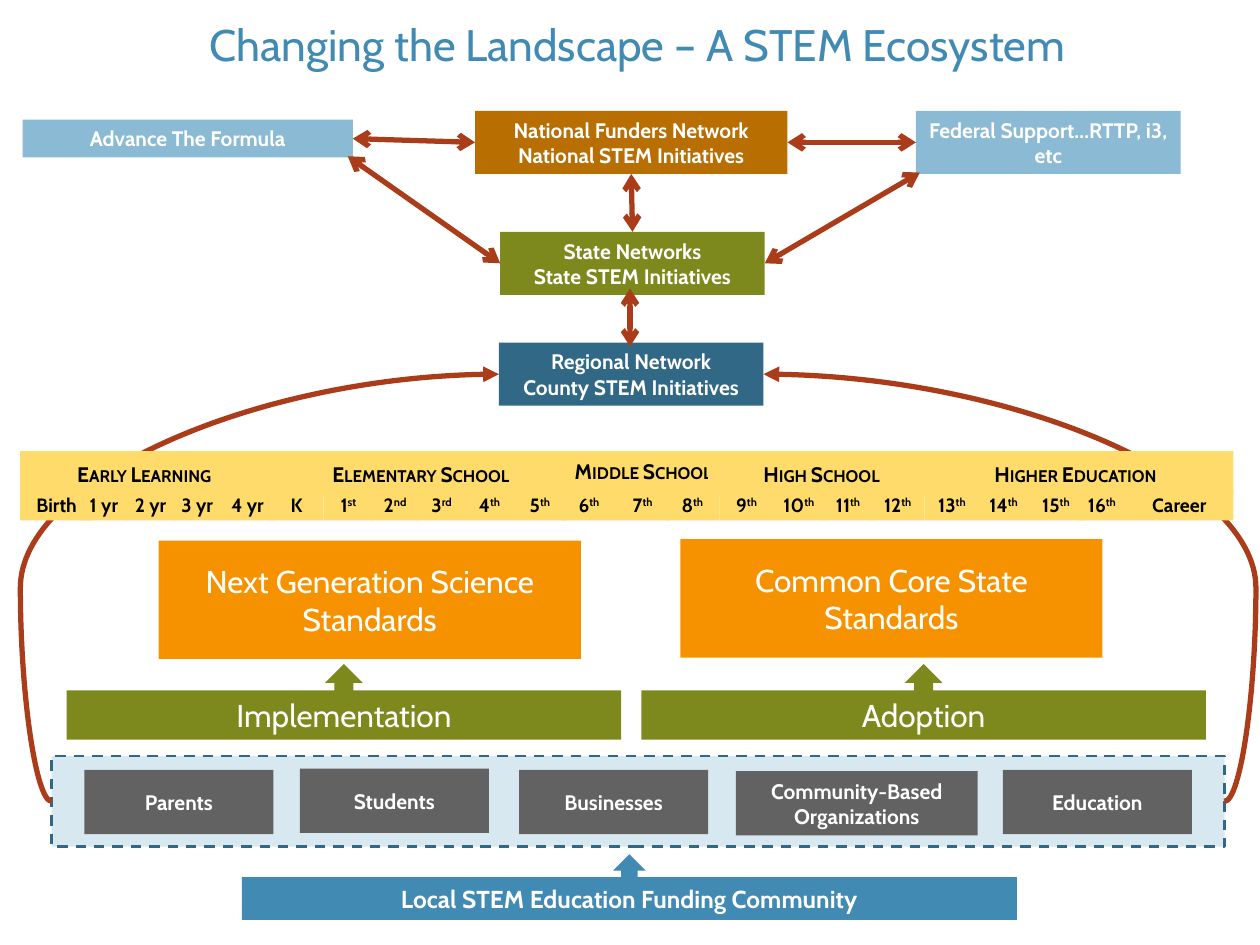
from lxml.etree import SubElement
from pptx import Presentation
from pptx.dml.color import RGBColor
from pptx.enum.dml import MSO_LINE
from pptx.enum.shapes import MSO_CONNECTOR, MSO_SHAPE
from pptx.enum.text import MSO_ANCHOR, PP_ALIGN
from pptx.oxml.ns import qn
from pptx.util import Inches, Pt

COLORS = {
    "title": "418AB3", "white": "FFFFFF", "black": "000000",
    "national": "B86E00", "green": "7D891D", "regional": "316886",
    "partner": "8ABAD4", "arrow": "AB3C19", "band": "FEDB6A",
    "standard": "F69200", "panel": "D8E8F1", "stakeholder": "626262",
    "funding": "418AB3",
}
TOP, LEFT, BOTTOM, RIGHT = range(4)
BOX_TEXT = {"size": Pt(12), "bold": True}
LARGE_TEXT = {"size": Pt(18), "bold": False}
GRADE_MARGINS = {"margin_left": 0, "margin_right": 0,
                 "margin_top": Inches(0.03), "margin_bottom": Inches(0.03)}


def color(name):
    return RGBColor.from_string(COLORS[name])


def set_attributes(target, values):
    for name, value in values.items():
        setattr(target, name, value)


def add_run(paragraph, text, font_values, font_color, **run_properties):
    run = paragraph.add_run()
    run.text = text
    set_attributes(run.font, {"name": "Cabin", **font_values})
    run.font.color.rgb = color(font_color)
    for name, value in run_properties.items():
        run.font._element.set(name, value) if hasattr(run.font, "_element") \
            else run._r.get_or_add_rPr().set(name, value)
    return run


def add_box(shapes, box, fill, lines=(), preset=MSO_SHAPE.RECTANGLE, font=BOX_TEXT,
            font_color="white", anchor=MSO_ANCHOR.MIDDLE, frame=None, **run_properties):
    shape = shapes.add_shape(preset, *map(Inches, box))
    shape.shadow.inherit = False
    shape.fill.solid()
    shape.fill.fore_color.rgb = color(fill)
    shape.line.fill.background()
    text_frame = shape.text_frame
    set_attributes(text_frame, {"word_wrap": True, "vertical_anchor": anchor, **(frame or {})})
    for index, line in enumerate(lines):
        paragraph = text_frame.add_paragraph() if index else text_frame.paragraphs[0]
        paragraph.alignment = PP_ALIGN.CENTER
        add_run(paragraph, line, font, font_color, **run_properties)
    return shape


def add_arrow(slide, start, end, kind=MSO_CONNECTOR.STRAIGHT, head="arrow", tail="arrow"):
    connector = slide.shapes.add_connector(kind, *map(Inches, (*start, *end)))
    connector.line.width = Pt(3)
    connector.line.color.rgb = color("arrow")
    line = connector.line._get_or_add_ln()
    for tag, arrowhead in (("a:headEnd", head), ("a:tailEnd", tail)):
        if arrowhead:
            SubElement(line, qn(tag), type=arrowhead)
    SubElement(connector._element.spPr, qn("a:effectLst"))
    return connector


def add_title(slide, box):
    title = slide.shapes.title
    set_attributes(title, dict(zip(("left", "top", "width", "height"), map(Inches, box))))
    set_attributes(title.text_frame, {"word_wrap": True, "vertical_anchor": MSO_ANCHOR.TOP})
    paragraph = title.text_frame.paragraphs[0]
    paragraph.alignment = PP_ALIGN.CENTER
    add_run(paragraph, "Changing the Landscape – A STEM Ecosystem", {"size": Pt(25.2)}, "title")


def add_networks(slide, box):
    left, top = box[:2]
    boxes = {}
    for name, x, y, width, height, fill, lines in (
        ("national", 3.59, 0, 2.48, 0.5, "national",
         ("National Funders Network", "National STEM Initiatives")),
        ("state", 3.79, 0.96, 2.1, 0.5, "green", ("State Networks", "State STEM Initiatives")),
        ("regional", 3.78, 1.84, 2.1, 0.5, "regional",
         ("Regional Network", "County STEM Initiatives")),
        ("partner", 0, 0.07, 2.62, 0.3, "partner", ("Advance The Formula",)),
        ("federal", 7.09, 0, 2.1, 0.5, "partner", ("Federal Support…RTTP, i3, etc",)),
    ):
        boxes[name] = add_box(slide.shapes, (left + x, top + y, width, height), fill, lines)

    for begin, begin_side, end, end_side in (
        ("state", TOP, "national", BOTTOM),
        ("partner", RIGHT, "national", LEFT),
        ("federal", LEFT, "national", RIGHT),
    ):
        arrow = add_arrow(slide, (left, top), (left, top))
        arrow.begin_connect(boxes[begin], begin_side)
        arrow.end_connect(boxes[end], end_side)

    for side, x, y in ((RIGHT, 7.12, 0.49), (LEFT, 2.58, 0.36)):
        arrow = add_arrow(slide, (left, top), (left + x, top + y))
        arrow.begin_connect(boxes["state"], side)
    add_arrow(slide, (left + 4.82, top + 1.87), (left + 4.82, top + 1.41))


def add_feedback_curves(slide, box):
    left, top, width, height = box
    for start, end, bend in ((left, 3.96, -7000), (left + width, 6.06, -6800)):
        curve = add_arrow(slide, (start, top + height), (end, top),
                          MSO_CONNECTOR.CURVE, head=None, tail="triangle")
        geometry = curve._element.spPr.find(qn("a:prstGeom"))
        adjustments = geometry.find(qn("a:avLst"))
        if adjustments is None:
            adjustments = SubElement(geometry, qn("a:avLst"))
        SubElement(adjustments, qn("a:gd"), name="adj1", fmla=f"val {bend}")


def add_stakeholders(slide, box):
    left, top = box[:2]
    shapes = slide.shapes.add_group_shape().shapes
    panel = add_box(shapes, box, "panel")
    panel.line.color.rgb = color("regional")
    set_attributes(panel.line, {"width": Pt(1.5), "dash_style": MSO_LINE.DASH})
    for name, x, y, width in (
        ("Parents", 0.26, 0.11, 1.5), ("Students", 1.97, 0.1, 1.5),
        ("Businesses", 3.71, 0.11, 1.5),
        ("Community-Based Organizations", 5.43, 0.12, 1.92), ("Education", 7.55, 0.11, 1.5),
    ):
        add_box(shapes, (left + x, top + y, width, 0.51), "stakeholder", (name,))


def add_school_band(slide, box):
    left, top, width = box[:3]
    shapes = slide.shapes.add_group_shape().shapes
    add_box(shapes, (left, top, width, 0.35), "band")
    for name, x, y, stage_width in (
        ("Early Learning", 0, 0.03, 1.97), ("Elementary School", 2.05, 0.03, 2.26),
        ("Middle School", 4.13, 0.01, 1.63), ("High School", 5.46, 0.03, 1.8),
        ("Higher Education", 7.18, 0.03, 2.39),
    ):
        add_box(shapes, (left + x, top + y, stage_width, 0.3), "band", (name,),
                font_color="black", cap="small")

    grade_font = {"size": Pt(11), "bold": True}
    for name, suffix, x, grade_width in (
        ("Birth", "", 0, 0.58), ("1 yr", "", 0.47, 0.39), ("2 yr", "", 0.84, 0.39),
        ("3 yr", "", 1.21, 0.39), ("4 yr", "", 1.59, 0.43), ("K", "", 1.98, 0.43),
        ("1", "st", 2.41, 0.39), ("2", "nd", 2.78, 0.39), ("3", "rd", 3.15, 0.39),
        ("4", "th", 3.53, 0.39), ("5", "th", 3.91, 0.43), ("6", "th", 4.3, 0.43),
        ("7", "th", 4.73, 0.42), ("8", "th", 5.12, 0.43), ("9", "th", 5.55, 0.43),
        ("10", "th", 5.97, 0.42), ("11", "th", 6.36, 0.42), ("12", "th", 6.75, 0.43),
        ("13", "th", 7.18, 0.43), ("14", "th", 7.61, 0.39), ("15", "th", 7.98, 0.48),
        ("16", "th", 8.39, 0.39), ("Career", "", 8.77, 0.86),
    ):
        grade = add_box(shapes, (left + x, top + 0.3, grade_width, 0.25), "band", (name,),
                        font=grade_font, font_color="black", frame=GRADE_MARGINS)
        if suffix:
            add_run(grade.text_frame.paragraphs[0], suffix, grade_font, "black",
                    baseline="30000")


def add_standards(slide, box):
    left, top = box[:2]
    for name, x, y in (("Next Generation Science Standards", 0.73, 0.01),
                       ("Common Core State Standards", 4.87, 0)):
        add_box(slide.shapes, (left + x, top + y, 3.35, 0.94), "standard", (name,),
                font=LARGE_TEXT)
    for name, x, width in (("Implementation", 0, 4.4), ("Adoption", 4.56, 4.48)):
        add_box(slide.shapes, (left + x, top + 0.99, width, 0.6), "green", (name,),
                MSO_SHAPE.UP_ARROW_CALLOUT, LARGE_TEXT)


def add_funding(slide, box):
    add_box(slide.shapes, box, "funding", ("Local STEM Education Funding Community",),
            MSO_SHAPE.UP_ARROW_CALLOUT, {"size": Pt(14), "bold": True})


def main():
    presentation = Presentation()
    presentation.slide_width, presentation.slide_height = Inches(10), Inches(7.5)
    slide = presentation.slides.add_slide(presentation.slide_layouts[5])
    add_title(slide, (1.14, 0.09, 7.84, 0.79))
    add_networks(slide, (0.18, 0.88, 9.19, 2.34))
    add_stakeholders(slide, (0.41, 6, 9.31, 0.72))
    add_funding(slide, (1.92, 6.78, 6.15, 0.52))
    add_feedback_curves(slide, (0.41, 2.97, 9.31, 3.39))
    add_school_band(slide, (0.16, 3.58, 9.63, 0.55))
    add_standards(slide, (0.53, 4.28, 9.04, 1.59))
    presentation.save("out.pptx")


if __name__ == "__main__":
    main()
